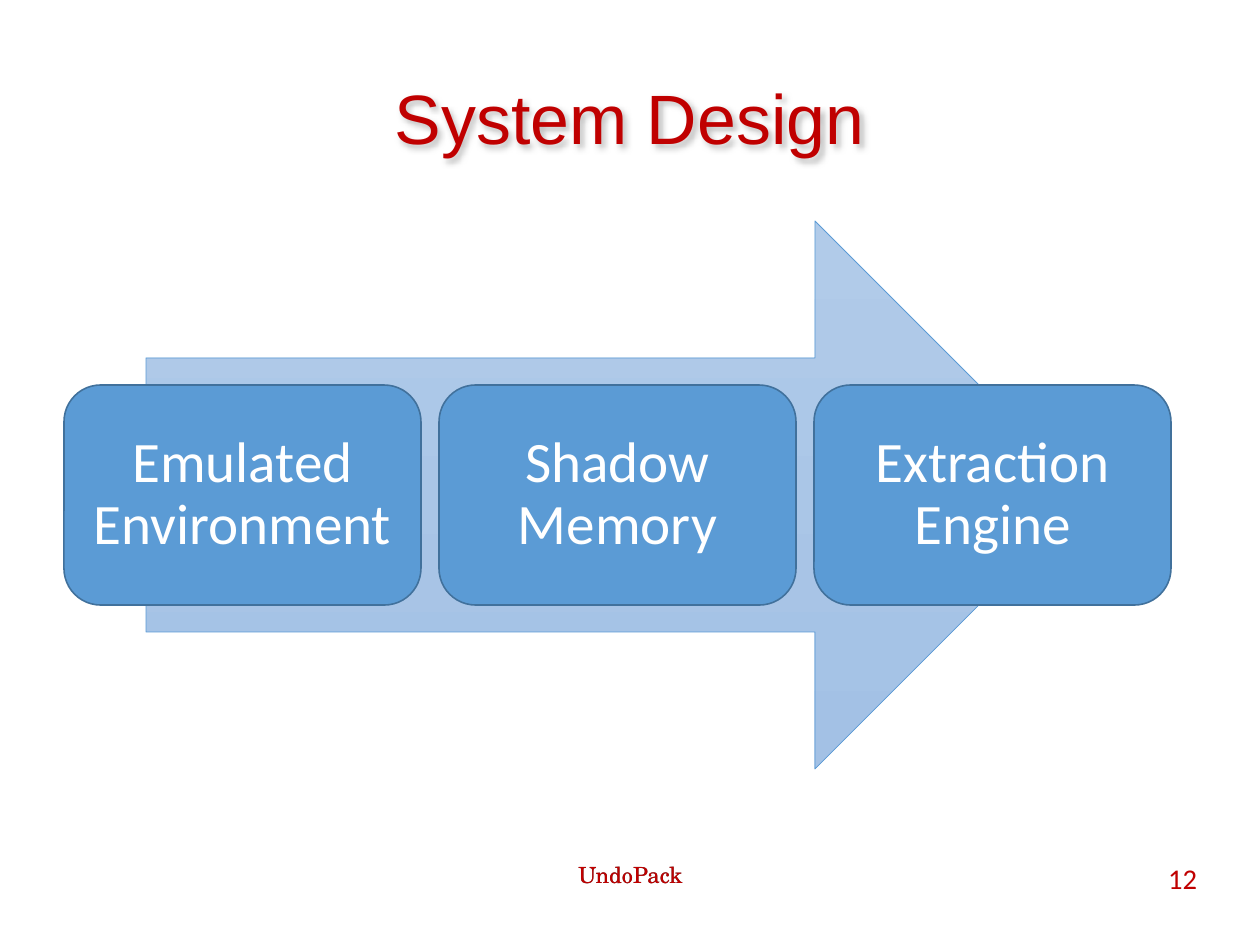
from lxml import etree
from pptx import Presentation, util as u
from pptx.dml import color
from pptx.enum import shapes, text
from pptx.oxml import ns

PX = 8000
ALIGN = text.PP_ALIGN
ANCHOR = text.MSO_ANCHOR
KIND = shapes.MSO_SHAPE


def px(n):
    """Turn whole px into EMU."""
    return u.Emu(round(n * PX))


def rgb(code):
    """Turn a hex string into a colour."""
    return color.RGBColor.from_string(code)


def put(obj, vals):
    """Set every attribute named in a dict."""
    for key, val in vals.items():
        setattr(obj, key, val)


def write(shape, words, font, size, tint, pad=0, anchor=ANCHOR.TOP, **para):
    """Fill a shape with one styled paragraph."""
    frame = shape.text_frame
    sides = ("left", "top", "right", "bottom")
    put(frame, {f"margin_{side}": px(pad) for side in sides})
    put(frame, {"word_wrap": True, "vertical_anchor": anchor})
    line = frame.paragraphs[0]
    line.text = words
    put(line, {"alignment": ALIGN.CENTER, **para})
    put(line.font, {"name": font, "size": u.Pt(size)})
    line.font.color.rgb = rgb(tint)


def label(slide, box, *args, **kind):
    """Add a text box and return it."""
    shape = slide.shapes.add_textbox(*map(px, box))
    write(shape, *args, **kind)
    return shape


def block(slide, kind, box, edge, width):
    """Add a preset shape with an outline and no shadow."""
    shape = slide.shapes.add_shape(kind, *map(px, box))
    shape.shadow.inherit = False
    shape.line.color.rgb = rgb(edge)
    shape.line.width = u.Pt(width)
    return shape


def glow(shape):
    """Cast a soft shadow from the text of a box."""
    root = etree.SubElement(shape._element.spPr, ns.qn("a:effectLst"))
    cast = etree.SubElement(root, ns.qn("a:outerShdw"),
                            blurRad="50800", dist="25400", dir="2700000")
    tone = etree.SubElement(cast, ns.qn("a:srgbClr"), val="000000")
    etree.SubElement(tone, ns.qn("a:alpha"), val="25000")


def title(slide, box):
    """Place the heading."""
    glow(label(slide, box, "System Design", "Arial", 44, "C00000",
               anchor=ANCHOR.MIDDLE))


def flow(slide, box, steps):
    """Place the arrow and the row of steps across it."""
    x, y, w, h = box
    inset = 82
    arrow = block(slide, KIND.RIGHT_ARROW,
                  (x + inset, y, w - 2 * inset, h), "5B9BD5", 0.5)
    arrow.fill.gradient()
    arrow.fill.gradient_angle = 270
    for stop, (pos, tint) in zip(arrow.fill.gradient_stops,
                                 ((0, "B1CBE9"), (1, "A3C1E5"))):
        stop.position = pos
        stop.color.rgb = rgb(tint)
    gap, tall = 18, 220
    wide = (w - gap * (len(steps) - 1)) / len(steps)
    for i, step in enumerate(steps):
        spot = (x + i * (wide + gap), y + (h - tall) / 2, wide, tall)
        card = block(slide, KIND.ROUNDED_RECTANGLE, spot, "41719C", 1)
        card.fill.solid()
        card.fill.fore_color.rgb = rgb("5B9BD5")
        write(card, step, "Calibri", 36, "FFFFFF", 17, ANCHOR.MIDDLE,
              line_spacing=0.9, space_after=u.Pt(15))


def footer(slide, box):
    """Place the dark-edged project name and the page number."""
    x, y, w, h = box
    for tint in ("404040", "C00000"):
        label(slide, (x + 368, y, 399, h), "UndoPack", "TeX Gyre Schola",
              14, tint)
    label(slide, (x + w - 294, y, 294, h), "12", "Calibri", 18, "C00000",
          alignment=ALIGN.RIGHT)


def main():
    """Build and save the slide."""
    deck = Presentation()
    put(deck, {"slide_width": px(1260), "slide_height": px(945)})
    slide = deck.slides.add_slide(deck.slide_layouts[6])
    title(slide, (63, 38, 1134, 158))
    flow(slide, (64, 221, 1107, 548),
         ("Emulated Environment", "Shadow Memory", "Extraction Engine"))
    footer(slide, (63, 861, 1134, 65))
    deck.save("out.pptx")


if __name__ == "__main__":
    main()
